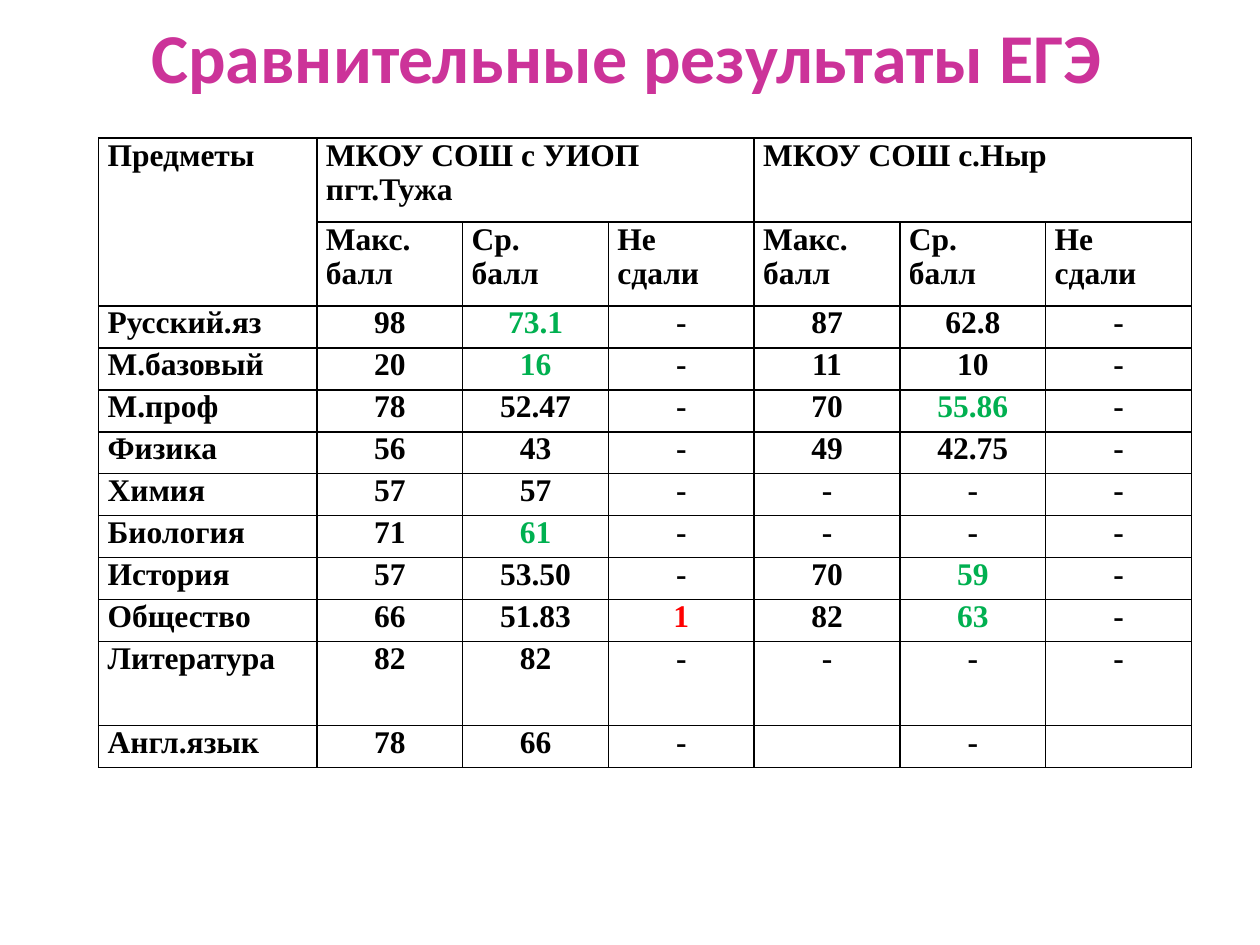
from lxml import etree
from pptx import Presentation
from pptx.dml.color import RGBColor
from pptx.enum import text
from pptx.oxml import ns
from pptx.util import Cm, Pt

COLORS = {"title": "CC3399", "text": "000000", "border": "000000",
          "better": "00B050", "failed": "FF0000"}

SCHOOLS = ["МКОУ СОШ с УИОП\nпгт.Тужа", "МКОУ СОШ с.Ныр"]
MEASURES = ["Макс.\nбалл", "Ср.\nбалл", "Не\nсдали"]
RESULTS = [
    ["Русский.яз", "98", "73.1", "-", "87", "62.8", "-"],
    ["М.базовый", "20", "16", "-", "11", "10", "-"],
    ["М.проф", "78", "52.47", "-", "70", "55.86", "-"],
    ["Физика", "56", "43", "-", "49", "42.75", "-"],
    ["Химия", "57", "57", "-", "-", "-", "-"],
    ["Биология", "71", "61", "-", "-", "-", "-"],
    ["История", "57", "53.50", "-", "70", "59", "-"],
    ["Общество", "66", "51.83", "1", "82", "63", "-"],
    ["Литература", "82", "82", "-", "-", "-", "-"],
    ["Англ.язык", "78", "66", "-", "", "-", ""],
]
# (subject, column) -> colour name
HIGHLIGHTS = {
    ("Русский.яз", 2): "better", ("М.базовый", 2): "better",
    ("М.проф", 5): "better", ("Биология", 2): "better",
    ("История", 5): "better", ("Общество", 5): "better",
    ("Общество", 3): "failed",
}
ROW_UNITS = [2, 2, 1, 1, 1, 1, 1, 1, 1, 1, 2, 1]


def add_run(p, words, font, size, color):
    r = p.add_run()
    r.text = words
    r.font.name, r.font.size, r.font.bold = font, Pt(size), True
    r.font.color.rgb = RGBColor.from_string(COLORS[color])


def add_title(slide, left, top, width, height):
    tf = slide.shapes.add_textbox(left, top, width, height).text_frame
    tf.word_wrap = True
    tf.vertical_anchor = text.MSO_ANCHOR.MIDDLE
    p = tf.paragraphs[0]
    p.alignment = text.PP_ALIGN.CENTER
    add_run(p, "Сравнительные результаты ЕГЭ", "Calibri", 40, "title")


def style_cell(cell):
    """Clear the fill, set the margins and draw all four borders."""
    cell.fill.background()
    cell.margin_left = cell.margin_right = Cm(0.18)
    cell.margin_top = cell.margin_bottom = 0
    tc_pr = cell._tc.get_or_add_tcPr()
    for i, side in enumerate(("lnL", "lnR", "lnT", "lnB")):
        ln = etree.Element(ns.qn(f"a:{side}"), w=str(Pt(1)))
        fill = etree.SubElement(ln, ns.qn("a:solidFill"))
        etree.SubElement(fill, ns.qn("a:srgbClr"), val=COLORS["border"])
        tc_pr.insert(i, ln)


def write_cell(cell, words, align, color="text"):
    tf = cell.text_frame
    for i, line in enumerate(words.split("\n")):
        p = tf.add_paragraph() if i else tf.paragraphs[0]
        p.alignment = align
        if line:
            add_run(p, line, "Times New Roman", 18, color)


def add_results_table(slide, left, top, width, height):
    columns = 1 + len(SCHOOLS) * len(MEASURES)
    table = slide.shapes.add_table(len(ROW_UNITS), columns, left, top,
                                   width, height).table
    table.first_row = table.horz_banding = False

    subject_width = Cm(4.4)
    for i, column in enumerate(table.columns):
        column.width = (width - subject_width) // (columns - 1) if i else subject_width
    for row, units in zip(table.rows, ROW_UNITS):
        row.height = height * units // sum(ROW_UNITS)
    for cell in table.iter_cells():
        style_cell(cell)

    justify, center = text.PP_ALIGN.JUSTIFY, text.PP_ALIGN.CENTER
    table.cell(0, 0).merge(table.cell(1, 0))
    write_cell(table.cell(0, 0), "Предметы", justify)
    for i, school in enumerate(SCHOOLS):
        first = 1 + i * len(MEASURES)
        table.cell(0, first).merge(table.cell(0, first + len(MEASURES) - 1))
        write_cell(table.cell(0, first), school, justify)
        for j, measure in enumerate(MEASURES):
            write_cell(table.cell(1, first + j), measure, justify)

    for i, result in enumerate(RESULTS, start=2):
        for j, value in enumerate(result):
            write_cell(table.cell(i, j), value, center if j else justify,
                       HIGHLIGHTS.get((result[0], j), "text"))


def main():
    prs = Presentation()
    prs.slide_width, prs.slide_height = Cm(25.4), Cm(19.05)
    slide = prs.slides.add_slide(prs.slide_layouts[6])
    add_title(slide, Cm(1.2), Cm(0.4), Cm(22.86), Cm(1.42))
    add_results_table(slide, Cm(1.99), Cm(2.78), Cm(22.03), Cm(12.7))
    prs.save("out.pptx")


if __name__ == "__main__":
    main()
